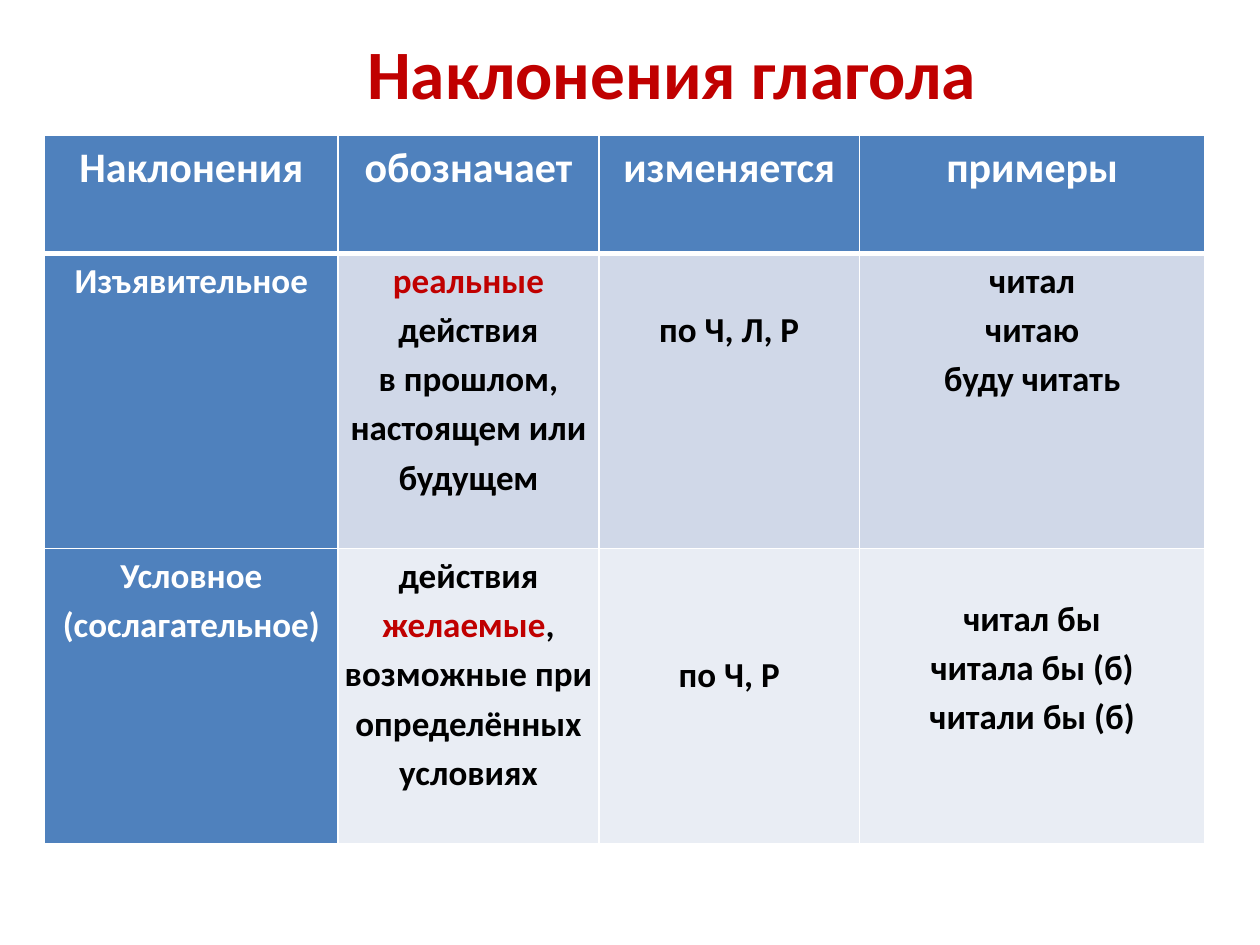
from dataclasses import dataclass

from lxml.etree import SubElement
from pptx import Presentation
from pptx.dml.color import RGBColor
from pptx.enum.text import MSO_ANCHOR as Anchor, MSO_AUTO_SIZE as AutoSize, PP_ALIGN as Align
from pptx.oxml.ns import qn
from pptx.util import Pt

COLORS = {
    "accent": "C00000",
    "header": "4F81BD",
    "band_dark": "D0D8E8",
    "band_light": "E9EDF4",
    "white": "FFFFFF",
    "black": "000000",
}
FONT = "Calibri"
COLUMN_WIDTHS = (167.7, 149, 149, 197.3)
ROW_HEIGHTS = (67.5, 168.7, 168.7)
LINE_SPACING = 1.15
LINE_PITCH = 28.2  # one line of 20 pt text at the table's line spacing


@dataclass(frozen=True)
class Entry:
    """Cell text; parts between asterisks take the accent colour."""
    paragraphs: tuple[str, ...]
    top_gap: float = 0


@dataclass(frozen=True)
class MoodRow:
    entries: tuple[Entry, ...]
    band: str
    size: float = 20


ROWS = (
    MoodRow(tuple(Entry((heading,)) for heading in
                  ("Наклонения", "обозначает", "изменяется", "примеры")),
            "header", 24),
    MoodRow((
        Entry(("Изъявительное",)),
        Entry(("*реальные* действия", "в прошлом, настоящем или будущем")),
        Entry(("по Ч, Л, Р",), LINE_PITCH),
        Entry(("читал", "читаю", "буду читать")),
    ), "band_dark"),
    MoodRow((
        Entry(("Условное", "(сослагательное)")),
        Entry(("действия *желаемые*, возможные при определённых условиях",)),
        Entry(("по Ч, Р",), 2 * LINE_PITCH),
        Entry(("читал бы", "читала бы (б)", "читали бы (б)"), 24.6),
    ), "band_light"),
)


def rgb(color: str) -> RGBColor:
    return RGBColor.from_string(COLORS[color])


def set_attributes(target, formats: dict) -> None:
    for attribute, value in formats.items():
        setattr(target, attribute, value)


def add_words(paragraph, words: str, size: float, color: str) -> None:
    run = paragraph.add_run()
    run.text = words
    set_attributes(run.font, {"name": FONT, "size": Pt(size), "bold": True})
    run.font.color.rgb = rgb(color)


def set_borders(cell, widths: dict[str, float]) -> None:
    properties = cell._tc.get_or_add_tcPr()
    for side, width in widths.items():
        line = SubElement(properties, qn(f"a:ln{side}"), w=str(Pt(width)))
        line_fill = SubElement(line, qn("a:solidFill"))
        SubElement(line_fill, qn("a:srgbClr"), val=COLORS["white"])


def fill_cell(cell, entry: Entry, size: float, fill: str, color: str) -> None:
    set_attributes(cell, {
        "margin_left": Pt(2.7), "margin_right": Pt(2.7),
        "margin_top": Pt(entry.top_gap), "margin_bottom": 0,
        "vertical_anchor": Anchor.TOP,
    })
    cell.fill.solid()
    cell.fill.fore_color.rgb = rgb(fill)
    frame = cell.text_frame
    for index, text in enumerate(entry.paragraphs):
        paragraph = frame.add_paragraph() if index else frame.paragraphs[0]
        set_attributes(paragraph, {"alignment": Align.CENTER, "line_spacing": LINE_SPACING})
        for part, words in enumerate(text.split("*")):
            if words:
                add_words(paragraph, words, size, "accent" if part % 2 else color)


def add_title(slide) -> None:
    title = slide.shapes.title
    set_attributes(title, {"left": Pt(60), "top": Pt(21), "width": Pt(648), "height": Pt(39.5)})
    set_attributes(title.text_frame, {
        "word_wrap": True, "auto_size": AutoSize.NONE, "vertical_anchor": Anchor.MIDDLE,
    })
    paragraph = title.text_frame.paragraphs[0]
    paragraph.alignment = Align.CENTER
    add_words(paragraph, "Наклонения глагола", 39.6, "accent")


def add_mood_table(slide) -> None:
    table = slide.shapes.add_table(
        len(ROWS), len(COLUMN_WIDTHS), Pt(25.5), Pt(77.3),
        Pt(sum(COLUMN_WIDTHS)), Pt(sum(ROW_HEIGHTS))).table
    for column, width in zip(table.columns, COLUMN_WIDTHS):
        column.width = Pt(width)
    for row, height in zip(table.rows, ROW_HEIGHTS):
        row.height = Pt(height)

    for row_index, mood in enumerate(ROWS):
        for column_index, entry in enumerate(mood.entries):
            cell = table.cell(row_index, column_index)
            is_heading = row_index == 0 or column_index == 0
            set_borders(cell, {"L": 1, "R": 1,
                               "T": 3 if row_index == 1 else 1,
                               "B": 3 if row_index == 0 else 1})
            fill_cell(cell, entry, mood.size,
                      "header" if is_heading else mood.band,
                      "white" if is_heading else "black")


def main() -> None:
    deck = Presentation()
    set_attributes(deck, {"slide_width": Pt(720), "slide_height": Pt(540)})
    slide = deck.slides.add_slide(deck.slide_layouts[5])  # title only
    add_title(slide)
    add_mood_table(slide)
    deck.save("out.pptx")


if __name__ == "__main__":
    main()
